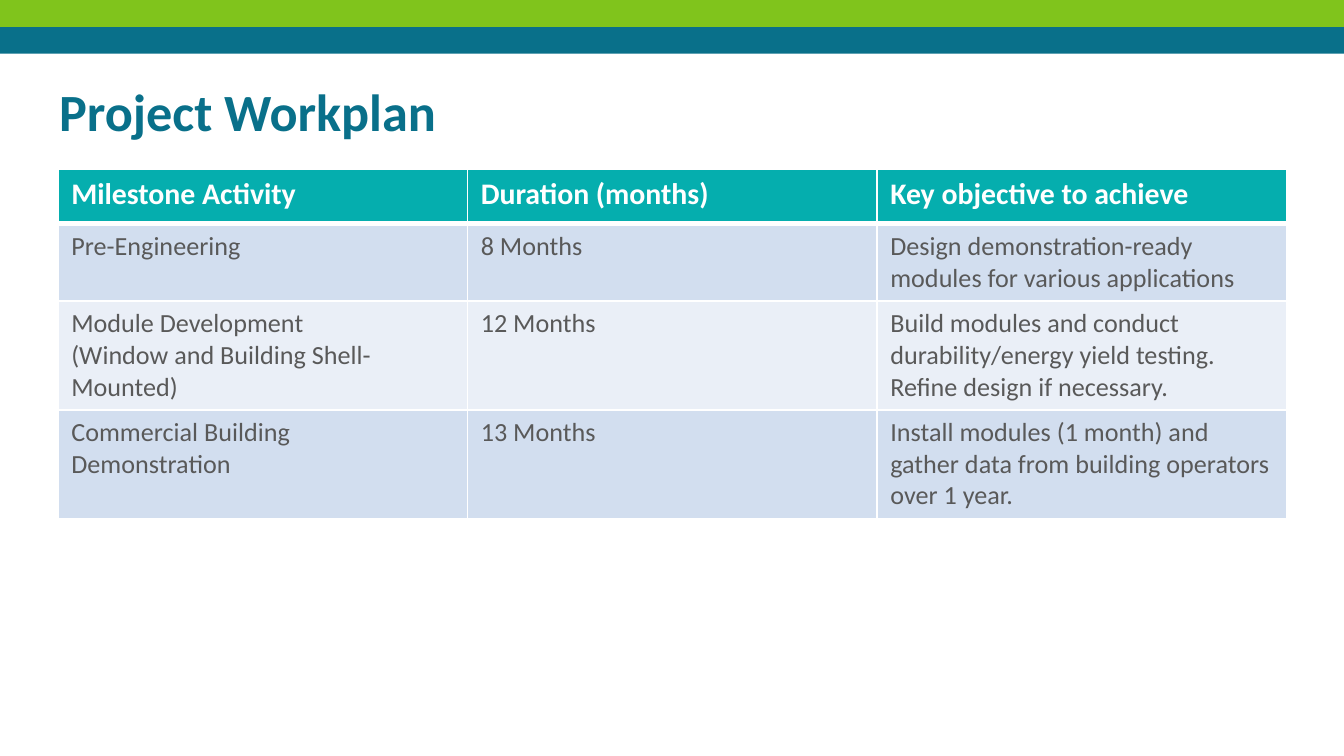
from lxml.etree import SubElement
from pptx import Presentation
from pptx.dml.color import RGBColor
from pptx.enum.shapes import MSO_SHAPE
from pptx.enum.text import MSO_ANCHOR, MSO_AUTO_SIZE, PP_ALIGN
from pptx.oxml.ns import qn
from pptx.util import Pt

FONT = "Calibri"
WHITE = RGBColor(0xFF, 0xFF, 0xFF)
GREEN = RGBColor(0x80, 0xC4, 0x1C)
BLUE = RGBColor(0x09, 0x70, 0x8A)
TEAL = RGBColor(0x05, 0xAE, 0xAE)
GREY = RGBColor(0x59, 0x59, 0x59)
DARK_BAND = RGBColor(0xD2, 0xDE, 0xEF)
LIGHT_BAND = RGBColor(0xEA, 0xEF, 0xF7)

PAGE_WIDTH, PAGE_HEIGHT = 720, 405
BAND_HEIGHT = 14.4
COLUMN_WIDTH = 219.4
ROW_HEIGHTS = [29.2, 41, 58.2, 58.2]
WORKPLAN = [
    ["Milestone Activity", "Duration (months)", "Key objective to achieve"],
    ["Pre-Engineering", "8 Months",
     "Design demonstration-ready modules for various applications"],
    ["Module Development\n(Window and Building Shell-Mounted)", "12 Months",
     "Build modules and conduct durability/energy yield testing. "
     "Refine design if necessary."],
    ["Commercial Building Demonstration", "13 Months",
     "Install modules (1 month) and gather data from building operators "
     "over 1 year."],
]


def add_span(para, text, size, color, bold=False):
    """Add one formatted run to a paragraph."""
    span = para.add_run()
    span.text = text
    span.font.name = FONT
    span.font.size = Pt(size)
    span.font.bold = bold
    span.font.color.rgb = color


def add_band(page, top, color):
    """Add a full-width colour band."""
    band = page.shapes.add_shape(
        MSO_SHAPE.RECTANGLE, Pt(0), Pt(top), Pt(PAGE_WIDTH), Pt(BAND_HEIGHT))
    band.shadow.inherit = False
    band.fill.solid()
    band.fill.fore_color.rgb = color
    band.line.fill.background()


def set_title(page, text):
    """Place and format the title placeholder."""
    title = page.shapes.title
    title.left, title.top = Pt(24.5), Pt(35.5)
    title.width, title.height = Pt(671), Pt(45.4)
    frame = title.text_frame
    frame.word_wrap = True
    frame.auto_size = MSO_AUTO_SIZE.NONE
    frame.vertical_anchor = MSO_ANCHOR.TOP
    frame.margin_left = frame.margin_right = Pt(7.2)
    frame.margin_top = frame.margin_bottom = Pt(7.2)
    para = frame.paragraphs[0]
    para.alignment = PP_ALIGN.LEFT
    add_span(para, text, 28, BLUE, True)


def set_borders(cell, top, bottom):
    """Draw white cell borders with the given top and bottom weights."""
    properties = cell._tc.get_or_add_tcPr()
    weights = {"a:lnL": 1, "a:lnR": 1, "a:lnT": top, "a:lnB": bottom}
    for tag, weight in weights.items():
        line = SubElement(properties, qn(tag), w=str(Pt(weight)))
        fill = SubElement(line, qn("a:solidFill"))
        SubElement(fill, qn("a:srgbClr"), val=str(WHITE))


def fill_cell(cell, text, row):
    """Style one cell for its row and write its text."""
    header = row == 0
    set_borders(cell, 3 if row == 1 else 1, 3 if header else 1)
    cell.fill.solid()
    cell.fill.fore_color.rgb = (
        TEAL if header else DARK_BAND if row % 2 else LIGHT_BAND)
    frame = cell.text_frame
    for index, line in enumerate(text.split("\n")):
        para = frame.add_paragraph() if index else frame.paragraphs[0]
        add_span(para, line, 16 if header else 14,
                 WHITE if header else GREY, header)


def add_workplan(page, rows):
    """Add the workplan table."""
    columns = len(rows[0])
    table = page.shapes.add_table(
        len(rows), columns, Pt(31), Pt(90.7),
        Pt(COLUMN_WIDTH * columns), Pt(sum(ROW_HEIGHTS))).table
    for column in table.columns:
        column.width = Pt(COLUMN_WIDTH)
    for row, texts in enumerate(rows):
        table.rows[row].height = Pt(ROW_HEIGHTS[row])
        for column, text in enumerate(texts):
            fill_cell(table.cell(row, column), text, row)


def main():
    """Build and save the slide."""
    deck = Presentation()
    deck.slide_width, deck.slide_height = Pt(PAGE_WIDTH), Pt(PAGE_HEIGHT)
    page = deck.slides.add_slide(deck.slide_layouts[5])
    add_band(page, BAND_HEIGHT, BLUE)
    add_band(page, 0, GREEN)
    set_title(page, "Project Workplan")
    add_workplan(page, WORKPLAN)
    deck.save("out.pptx")


if __name__ == "__main__":
    main()
